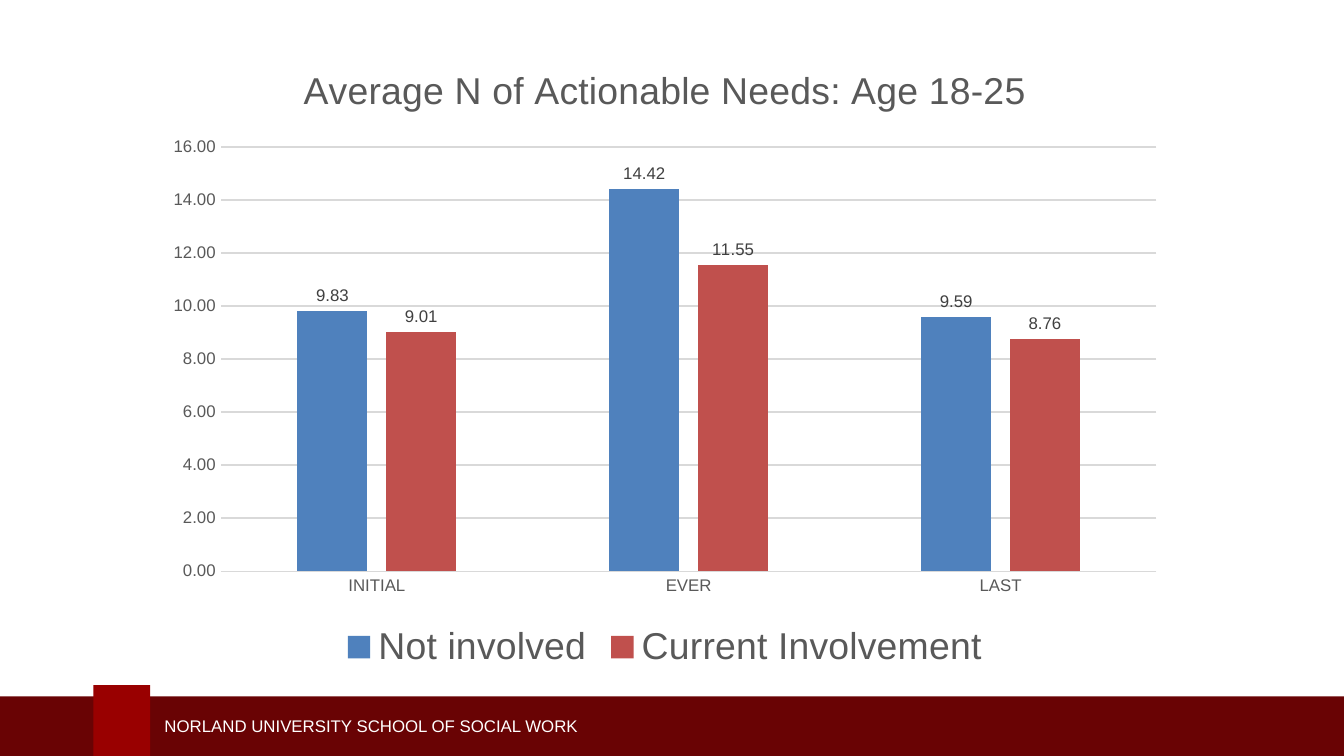
from pptx import Presentation
from pptx.chart.data import CategoryChartData
from pptx.dml.color import RGBColor
from pptx.enum.chart import XL_CHART_TYPE, XL_LABEL_POSITION, XL_LEGEND_POSITION, XL_TICK_MARK
from pptx.enum.shapes import MSO_SHAPE
from pptx.enum.text import MSO_ANCHOR
from pptx.util import Pt

RECT = MSO_SHAPE.RECTANGLE
COLUMN = XL_CHART_TYPE.COLUMN_CLUSTERED
ABOVE = XL_LABEL_POSITION.OUTSIDE_END
BOTTOM = XL_LEGEND_POSITION.BOTTOM
NO_TICK = XL_TICK_MARK.NONE
MIDDLE = MSO_ANCHOR.MIDDLE

MAROON = RGBColor(0x69, 0x03, 0x04)
CRIMSON = RGBColor(0x99, 0x00, 0x00)
WHITE = RGBColor(0xFF, 0xFF, 0xFF)
GREY = RGBColor(0x59, 0x59, 0x59)
DARK = RGBColor(0x40, 0x40, 0x40)
PALE = RGBColor(0xD9, 0xD9, 0xD9)
BLUE = RGBColor(0x4F, 0x81, 0xBD)
RED = RGBColor(0xC0, 0x50, 0x4D)

WIDTH, HEIGHT = 720, 405
FORMAT = "###0.00"
TITLE = "Average N of Actionable Needs: Age 18-25"
STAGES = ["INITIAL", "EVER", "LAST"]
GROUPS = [
    ("Not involved", [9.83, 14.42, 9.59], BLUE),
    ("Current Involvement", [9.01, 11.55, 8.76], RED),
]


def apply(item, values):
    for name, value in values.items():
        setattr(item, name, value)


class Deck:
    face = "Arial"
    small = 9
    large = 20

    def __init__(self):
        self.file = Presentation()
        apply(self.file, {"slide_width": Pt(WIDTH), "slide_height": Pt(HEIGHT)})
        self.slide = self.file.slides.add_slide(self.file.slide_layouts[6])

    def font(self, font, size, color):
        apply(font, {"name": self.face, "size": Pt(size), "bold": False})
        font.color.rgb = color

    def line(self, line):
        line.width = Pt(0.75)
        line.color.rgb = PALE

    def block(self, x, y, w, h, color):
        shape = self.slide.shapes.add_shape(RECT, Pt(x), Pt(y), Pt(w), Pt(h))
        shape.shadow.inherit = False
        shape.fill.solid()
        shape.fill.fore_color.rgb = color
        shape.line.fill.background()

    def text(self, x, y, w, h, words):
        frame = self.slide.shapes.add_textbox(Pt(x), Pt(y), Pt(w), Pt(h)).text_frame
        apply(frame, {"word_wrap": True, "vertical_anchor": MIDDLE})
        run = frame.paragraphs[0].add_run()
        run.text = words
        self.font(run.font, self.small, WHITE)

    def axis(self, axis):
        apply(axis, {"major_tick_mark": NO_TICK, "minor_tick_mark": NO_TICK})
        self.font(axis.tick_labels.font, self.small, GREY)

    def series(self, series, color):
        series.format.fill.solid()
        series.format.fill.fore_color.rgb = color
        labels = series.data_labels
        apply(labels, {
            "show_value": True,
            "position": ABOVE,
            "number_format": FORMAT,
            "number_format_is_linked": False,
        })
        self.font(labels.font, self.small, DARK)

    def chart(self, x, y, w, h, title, stages, groups):
        data = CategoryChartData(number_format=FORMAT)
        data.categories = stages
        for name, values, _ in groups:
            data.add_series(name, values)
        frame = self.slide.shapes.add_chart(COLUMN, Pt(x), Pt(y), Pt(w), Pt(h), data)
        chart = frame.chart
        apply(chart, {"has_title": True, "has_legend": True})
        apply(chart.font, {"name": self.face, "size": Pt(10)})

        head = chart.chart_title.text_frame.paragraphs[0].add_run()
        head.text = title
        self.font(head.font, self.large, GREY)
        apply(chart.legend, {"position": BOTTOM, "include_in_layout": False})
        self.font(chart.legend.font, self.large, GREY)

        stage, scale = chart.category_axis, chart.value_axis
        for axis in (stage, scale):
            self.axis(axis)
        self.line(stage.format.line)
        apply(scale, {
            "minimum_scale": 0,
            "maximum_scale": 16,
            "major_unit": 2,
            "has_major_gridlines": True,
        })
        apply(scale.tick_labels, {"number_format": FORMAT, "number_format_is_linked": False})
        scale.format.line.fill.background()
        self.line(scale.major_gridlines.format.line)

        plot = chart.plots[0]
        apply(plot, {"gap_width": 219, "overlap": -27, "vary_by_categories": False})
        for series, (_, _, color) in zip(plot.series, groups):
            self.series(series, color)


def main():
    deck = Deck()
    deck.block(0, 373, WIDTH, HEIGHT - 373, MAROON)
    deck.block(50, 367, 30.5, HEIGHT - 367, CRIMSON)
    deck.text(81, 380, 284, 18, "NORLAND UNIVERSITY SCHOOL OF SOCIAL WORK")
    deck.chart(82, 21.5, 548.5, 340.5, TITLE, STAGES, GROUPS)
    deck.file.save("out.pptx")


if __name__ == "__main__":
    main()
